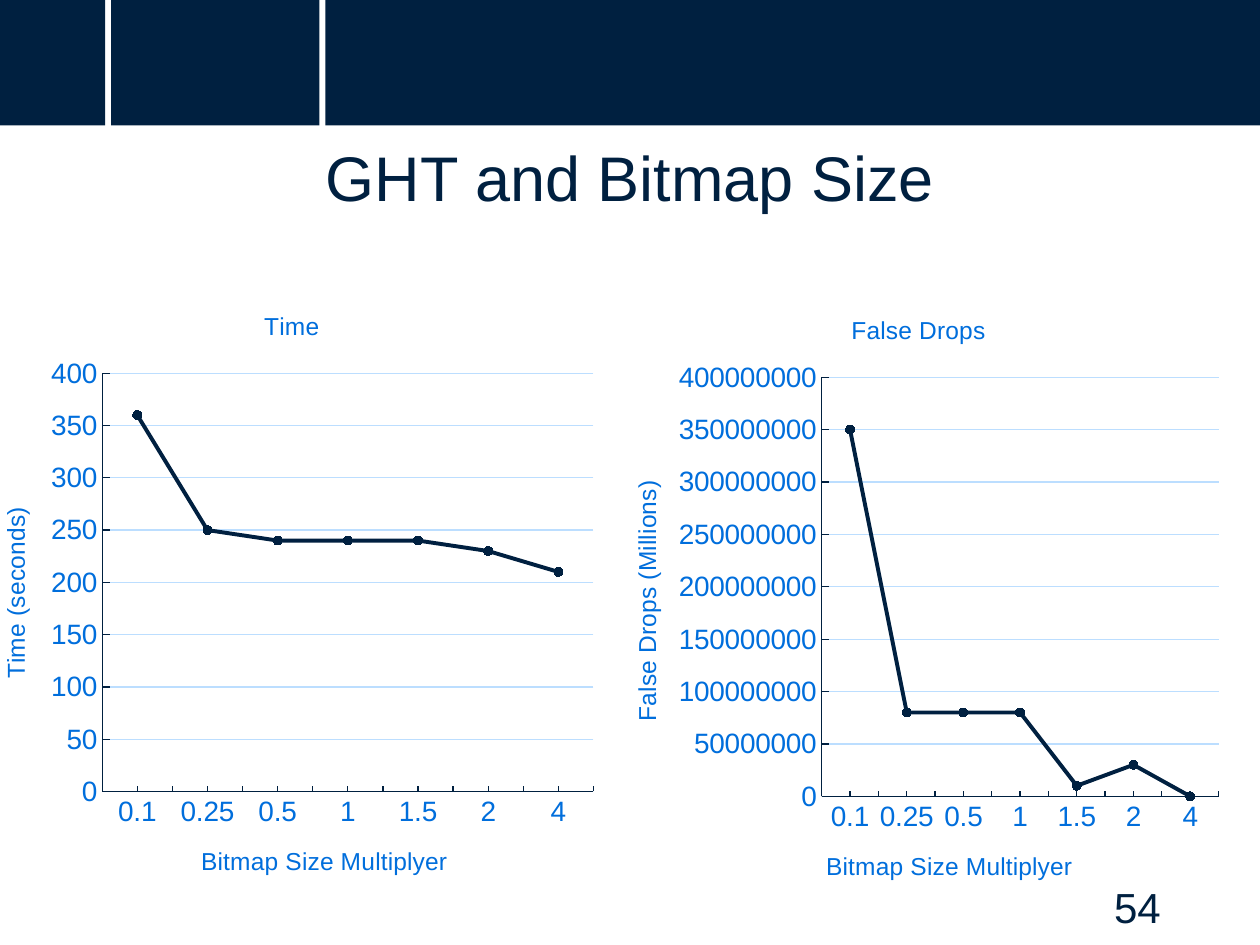
from lxml import etree
from pptx import Presentation
from pptx.chart.data import CategoryChartData
from pptx.dml.color import RGBColor
from pptx.enum.chart import XL_CHART_TYPE as ChartType, XL_MARKER_STYLE as Marker
from pptx.enum.chart import XL_TICK_MARK as Tick
from pptx.enum.shapes import MSO_SHAPE as Shape
from pptx.enum.text import MSO_ANCHOR as Anchor, PP_ALIGN as Align
from pptx.oxml import parse_xml
from pptx.oxml.ns import nsdecls, qn
from pptx.util import Cm, Pt

COLORS = {"navy": "002040", "blue": "006EDC", "grid": "BCDEFF"}
FONT = "Arial"
MULTIPLIERS = ["0.1", "0.25", "0.5", "1", "1.5", "2", "4"]


def color(name):
    return RGBColor.from_string(COLORS[name])


def style_font(font, size, name):
    font.name, font.size, font.bold = FONT, Pt(size), False
    font.color.rgb = color(name)


def style_line(line, name, width):
    line.color.rgb = color(name)
    line.width = Pt(width)


def add_banner(page):
    for left, width in [(0, 2.12), (2.24, 4.2), (6.56, 18.84)]:
        bar = page.shapes.add_shape(Shape.RECTANGLE, Cm(left), 0, Cm(width), Cm(2.53))
        bar.shadow.inherit = False
        bar.fill.solid()
        bar.fill.fore_color.rgb = color("navy")
        bar.line.fill.background()


def write_text(box, text, size, align):
    frame = box.text_frame
    frame.word_wrap = True
    frame.vertical_anchor = Anchor.TOP
    para = frame.paragraphs[0]
    para.text = text
    para.alignment = align
    style_font(para.font, size, "navy")


def set_layout(parent, x, y, width=None, height=None):
    """Place a title by its corner, or the inner plot area by its whole frame."""
    for old in parent.findall(qn("c:layout")):
        parent.remove(old)
    layout = parse_xml(f"<c:layout {nsdecls('c')}><c:manualLayout/></c:layout>")
    manual = layout[0]
    values = [("xMode", "edge"), ("yMode", "edge"), ("x", x), ("y", y)]
    if width is not None:
        values = [("layoutTarget", "inner")] + values + [("w", width), ("h", height)]
    for tag, value in values:
        etree.SubElement(manual, qn(f"c:{tag}")).set("val", str(value))
    text = parent.find(qn("c:tx"))
    if text is not None:
        text.addnext(layout)
    else:
        parent.insert(0, layout)


def write_chart_title(owner, text, corner):
    """Title a chart or an axis."""
    title = owner.chart_title if hasattr(owner, "chart_title") else owner.axis_title
    para = title.text_frame.paragraphs[0]
    para.text = text
    style_font(para.font, 14, "blue")
    set_layout(title._element, *corner)


def add_line_chart(page, frame, name, values, value_title, top, step, spots):
    data = CategoryChartData()
    data.categories = MULTIPLIERS
    data.add_series(name, values)
    chart = page.shapes.add_chart(
        ChartType.LINE_MARKERS, *[Cm(length) for length in frame], data).chart
    chart.has_legend = False
    style_font(chart.font, 10, "navy")
    write_chart_title(chart, name, spots["title"])

    # Axes
    categories, scale = chart.category_axis, chart.value_axis
    for axis in (categories, scale):
        style_font(axis.tick_labels.font, 16, "blue")
        style_line(axis.format.line, "navy", 0.75)
    categories.major_tick_mark = Tick.NONE
    categories.minor_tick_mark = Tick.INSIDE
    scale.major_tick_mark = Tick.INSIDE
    scale.minimum_scale, scale.maximum_scale, scale.major_unit = 0, top, step
    scale.tick_labels.number_format = "0"
    scale.tick_labels.number_format_is_linked = False
    style_line(scale.major_gridlines.format.line, "grid", 0.75)
    write_chart_title(categories, "Bitmap Size Multiplyer", spots["category"])
    write_chart_title(scale, value_title, spots["value"])
    set_layout(chart.plots[0]._element.getparent(), *spots["plot"])

    # Series
    chart.plots[0].vary_by_categories = False
    series = chart.plots[0].series[0]
    series.smooth = False
    style_line(series.format.line, "navy", 2.25)
    series.marker.style, series.marker.size = Marker.CIRCLE, 5
    series.marker.format.fill.solid()
    series.marker.format.fill.fore_color.rgb = color("navy")
    style_line(series.marker.format.line, "navy", 0.75)


def main():
    deck = Presentation()
    deck.slide_width, deck.slide_height = Cm(25.4), Cm(19.05)
    page = deck.slides.add_slide(deck.slide_layouts[5])
    add_banner(page)

    # Title and page number
    title = page.shapes.title
    title.left, title.top, title.width, title.height = Cm(1.75), Cm(2.67), Cm(21.9), Cm(2.46)
    write_text(title, "GHT and Bitmap Size", 36, Align.CENTER)
    number = page.shapes.add_textbox(Cm(17.93), Cm(17.65), Cm(5.72), Cm(1.02))
    write_text(number, "54", 24, Align.RIGHT)

    # Charts
    add_line_chart(
        page, (12.12, 5.87, 12.7, 12.42), "False Drops",
        [350000000, 80000000, 80000000, 80000000, 10000000, 30000000, 0],
        "False Drops (Millions)", 400000000, 50000000,
        {"title": (0.39, 0.03), "category": (0.35, 0.9), "value": (0.04, 0.3),
         "plot": (0.35, 0.14, 0.63, 0.68)})
    add_line_chart(
        page, (-0.48, 5.79, 12.7, 12.4), "Time",
        [360, 250, 240, 240, 240, 230, 210],
        "Time (seconds)", 400, 50,
        {"title": (0.45, 0.03), "category": (0.35, 0.9), "value": (0.03, 0.35),
         "plot": (0.2, 0.14, 0.78, 0.68)})

    deck.save("out.pptx")


if __name__ == "__main__":
    main()
